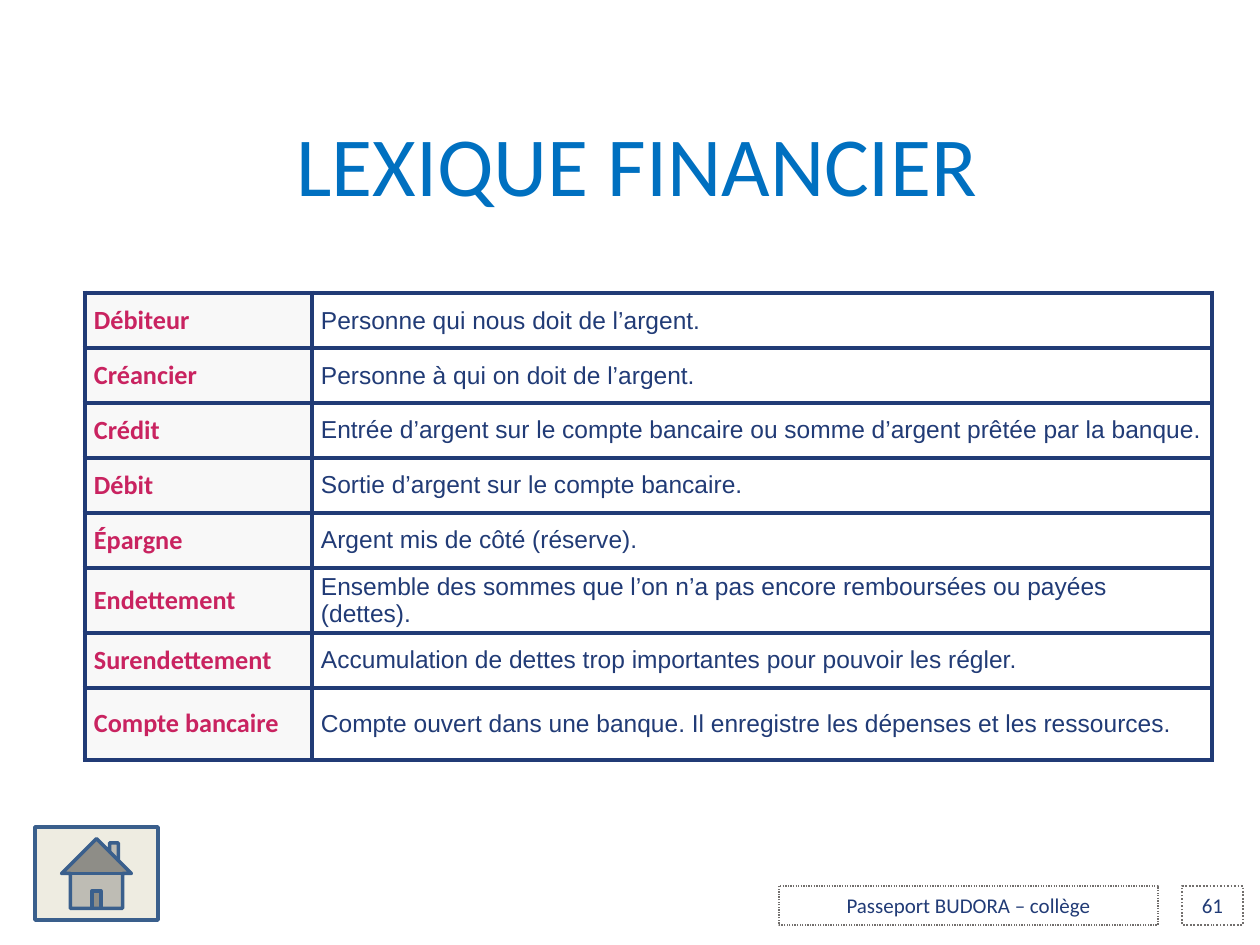
import pptx
import pptx.util
import pptx.dml.color
import pptx.enum.dml
import pptx.enum.shapes
import pptx.enum.text
import pptx.oxml
import pptx.oxml.ns

RGB = pptx.dml.color.RGBColor
NAVY = RGB(0x21, 0x3B, 0x76)
BLUE = RGB(0x00, 0x70, 0xC0)
PINK = RGB(0xC9, 0x23, 0x60)
PALE = RGB(0xF8, 0xF8, 0xF8)
GRAY = RGB(0x72, 0x6F, 0x6D)
SAND = RGB(0xEE, 0xEC, 0xE1)
STEEL = RGB(0x3A, 0x5F, 0x8C)

Pt = pptx.util.Pt
KIND = pptx.enum.shapes.MSO_SHAPE
MID = pptx.enum.text.MSO_ANCHOR.MIDDLE
ALIGN = pptx.enum.text.PP_ALIGN

TERMS = [
    ("Débiteur", "Personne qui nous doit de l’argent."),
    ("Créancier", "Personne à qui on doit de l’argent."),
    ("Crédit", "Entrée d’argent sur le compte bancaire ou somme d’argent prêtée par la banque."),
    ("Débit", "Sortie d’argent sur le compte bancaire."),
    ("Épargne", "Argent mis de côté (réserve)."),
    ("Endettement", "Ensemble des sommes que l’on n’a pas encore remboursées ou payées (dettes)."),
    ("Surendettement", "Accumulation de dettes trop importantes pour pouvoir les régler."),
    ("Compte bancaire", "Compte ouvert dans une banque. Il enregistre les dépenses et les ressources."),
]


def px(n):
    return pptx.util.Emu(round(n * 914400 / 126))


def write(frame, text, size, color, font="Calibri", bold=False, align=ALIGN.LEFT):
    frame.text = text
    para = frame.paragraphs[0]
    para.alignment = align
    face = para.runs[0].font
    face.name, face.size, face.bold = font, Pt(size), bold
    face.color.rgb = color


def add_title(slide, text):
    title = slide.shapes.title
    title.left, title.top, title.width, title.height = map(px, (73, 126, 1128, 73))
    frame = title.text_frame
    write(frame, text, 48, BLUE, align=ALIGN.CENTER)
    frame.auto_size = pptx.enum.text.MSO_AUTO_SIZE.NONE
    frame.vertical_anchor = MID
    frame.margin_left = frame.margin_right = px(6)
    frame.margin_top = frame.margin_bottom = px(6)


def add_shape(slide, kind, box, line, width):
    shape = slide.shapes.add_shape(kind, *map(px, box))
    shape.shadow.inherit = False
    shape.fill.background()
    shape.line.color.rgb = line
    shape.line.width = Pt(width)
    return shape


def add_label(slide, text, box, width, wrap):
    label = add_shape(slide, KIND.RECTANGLE, box, GRAY, width)
    label.line.dash_style = pptx.enum.dml.MSO_LINE.ROUND_DOT
    frame = label.text_frame
    write(frame, text, 12, NAVY, align=ALIGN.CENTER)
    frame.vertical_anchor = MID
    frame.word_wrap = wrap


def add_edge(cell, side, width):
    cell._tc.get_or_add_tcPr().append(pptx.oxml.parse_xml(
        f'<a:ln{side} {pptx.oxml.ns.nsdecls("a")} w="{Pt(width)}">'
        f'<a:solidFill><a:srgbClr val="{NAVY}"/></a:solidFill></a:ln{side}>'))


def fill_cell(cell, row, col, text):
    outer = {"L": col == 0, "R": col == 1, "T": row == 0, "B": row == len(TERMS) - 1}
    for side, thick in outer.items():
        add_edge(cell, side, 3 if thick else 2.25)
    cell.vertical_anchor = MID
    cell.margin_left = cell.margin_right = px(9)
    cell.margin_top = cell.margin_bottom = px(5)
    if col == 0:
        cell.fill.solid()
        cell.fill.fore_color.rgb = PALE
        write(cell.text_frame, text, 15, PINK, bold=True)
    else:
        cell.fill.background()
        write(cell.text_frame, text, 14, NAVY, font="Arial")


def add_terms(slide):
    box = map(px, (85, 293, 1127, 460))
    table = slide.shapes.add_table(len(TERMS), 2, *box).table
    table.first_row = table.horz_banding = False
    for col, width in zip(table.columns, (227, 900)):
        col.width = px(width)
    for row, pair in enumerate(TERMS):
        table.rows[row].height = px(72 if row == len(TERMS) - 1 else 55)
        for col, text in enumerate(pair):
            fill_cell(table.cell(row, col), row, col, text)


def add_home(slide):
    home = add_shape(slide, KIND.ACTION_BUTTON_HOME, (35, 827, 123, 93), STEEL, 2)
    home.fill.solid()
    home.fill.fore_color.rgb = SAND


def main():
    deck = pptx.Presentation()
    deck.slide_width, deck.slide_height = px(1260), px(945)
    slide = deck.slides.add_slide(deck.slide_layouts[5])
    add_label(slide, "61", (1182, 886, 61, 39), 1, False)
    add_title(slide, "LEXIQUE FINANCIER")
    add_terms(slide)
    add_label(slide, "Passeport BUDORA – collège", (779, 886, 379, 39), 0.75, True)
    add_home(slide)
    deck.save("out.pptx")


if __name__ == "__main__":
    main()
